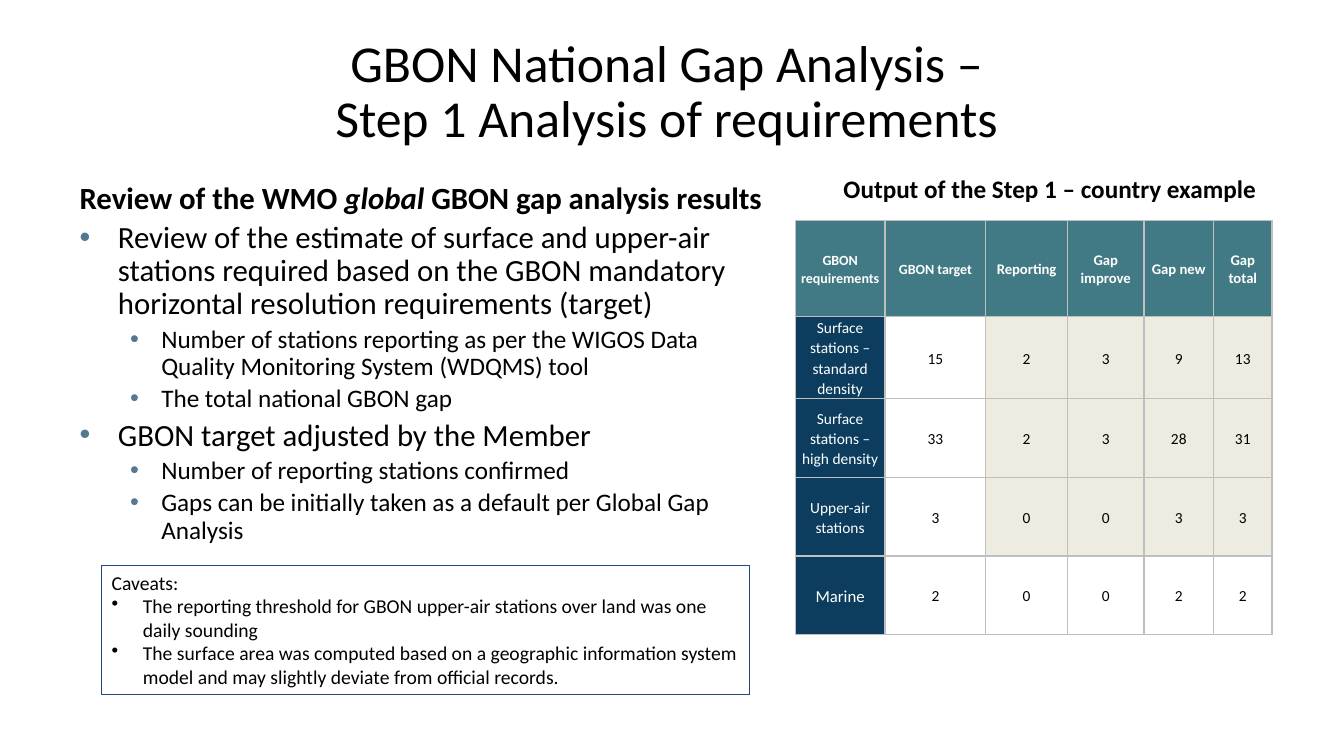
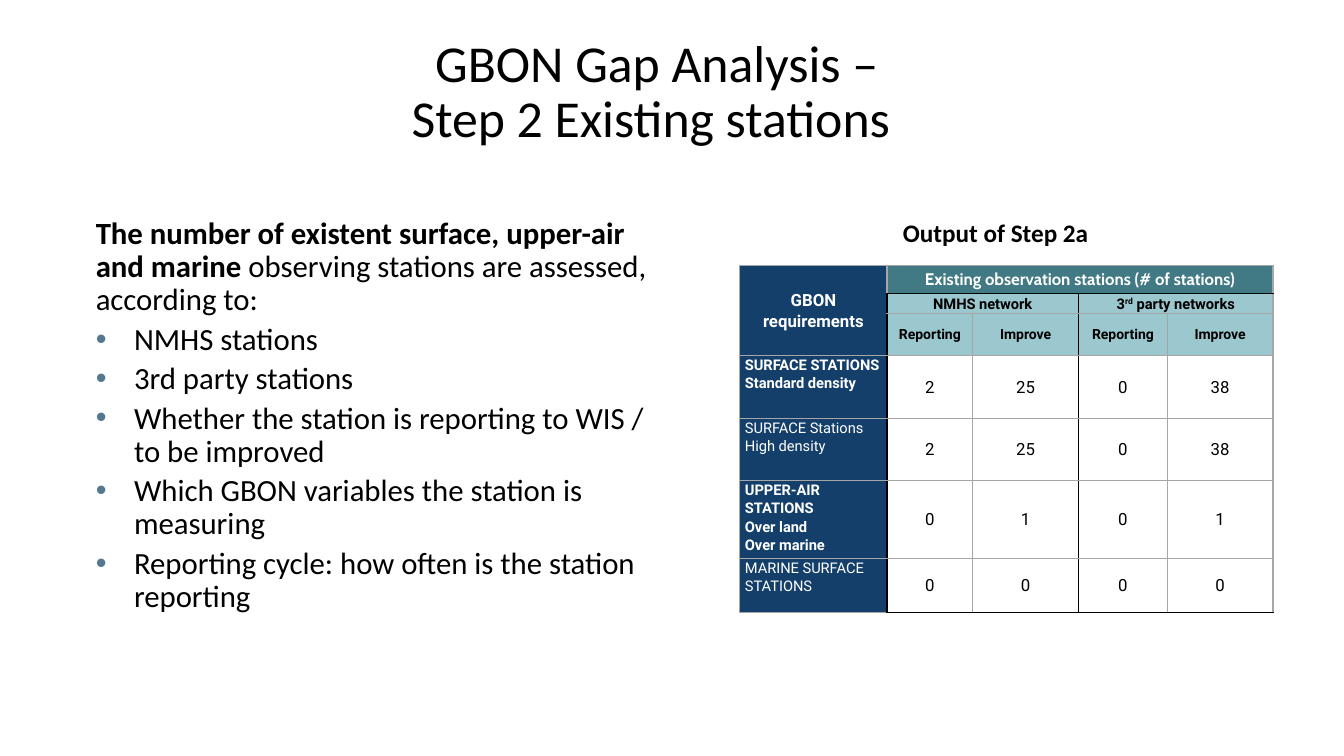
from dataclasses import dataclass

from lxml import etree
from pptx import Presentation
from pptx import util as u
from pptx.dml.color import RGBColor
from pptx.enum import shapes, text as t
from pptx.oxml import ns

PX = 9144  # EMU per px, 100 px to the inch


@dataclass(frozen=True)
class Theme:
    black: str = "000000"
    white: str = "FFFFFF"
    teal: str = "417A84"
    aqua: str = "9BC7CE"
    navy: str = "0C3D5E"
    blue: str = "143F6A"
    cream: str = "EEECE1"
    frame: str = "1F497D"
    bullet: str = "55788F"
    silver: str = "BFBFBF"
    grey: str = "A6A6A6"
    font: str = "Calibri"
    table_font: str = "Roboto"
    banner_font: str = "Cabin"
    title: float = 37
    body: float = 22
    sub: float = 18
    note: float = 14
    cell: float = 12
    label: float = 11
    head: float = 10.5
    small: float = 10


theme = Theme()
CENTER = t.PP_ALIGN.CENTER
MIDDLE, TOP = t.MSO_ANCHOR.MIDDLE, t.MSO_ANCHOR.TOP


def write(frame, content, align=t.PP_ALIGN.LEFT, spacing=1.0, indent=0, hang=0,
          bullet=None, level=0, **font):
    """Add one paragraph; content is a string or (string, font changes) pairs."""
    first = not frame.text
    paragraph = frame.paragraphs[0] if first else frame.add_paragraph()
    properties = paragraph._p.get_or_add_pPr()
    properties.set("marL", str(indent * PX))
    properties.set("indent", str(-hang * PX))
    if bullet:
        color = etree.SubElement(properties, ns.qn("a:buClr"))
        etree.SubElement(color, ns.qn("a:srgbClr"), val=bullet)
        etree.SubElement(properties, ns.qn("a:buChar"), char="•")
    else:
        etree.SubElement(properties, ns.qn("a:buNone"))
    paragraph.level = level
    paragraph.alignment = align
    paragraph.line_spacing = spacing
    if first:
        paragraph.space_before = u.Pt(0)
    for words, changes in [(content, {})] if isinstance(content, str) else content:
        look = {"size": theme.body, "color": theme.black, "name": theme.font,
                "bold": False, "italic": False, **font, **changes}
        for number, line in enumerate(words.split("\n")):
            if number:
                paragraph.add_line_break()
            run = paragraph.add_run()
            run.text = line
            run.font.size = u.Pt(look["size"])
            run.font.name = look["name"]
            run.font.bold = look["bold"]
            run.font.italic = look["italic"]
            run.font.color.rgb = RGBColor.from_string(look["color"])
            if "baseline" in look:
                run.font._element.set("baseline", look["baseline"])


def add_grid(slide, left, top, widths, heights, top_inset, edge_color):
    """Add a plain table; edge_color(row, column, side) gives each border."""
    graphic = slide.shapes.add_table(len(heights), len(widths), left * PX, top * PX,
                                     sum(widths) * PX, sum(heights) * PX)
    table = graphic.table
    table.first_row = table.horz_banding = False
    for column, width in zip(table.columns, widths):
        column.width = width * PX
    for row, height in zip(table.rows, heights):
        row.height = height * PX
    for r in range(len(heights)):
        for c in range(len(widths)):
            cell = table.cell(r, c)
            cell.margin_left = cell.margin_right = 5 * PX
            cell.margin_top, cell.margin_bottom = top_inset * PX, 0
            cell.vertical_anchor = MIDDLE
            properties = cell._tc.get_or_add_tcPr()
            for side in "LRTB":
                line = etree.SubElement(properties, ns.qn(f"a:ln{side}"), w="12700")
                fill = etree.SubElement(line, ns.qn("a:solidFill"))
                etree.SubElement(fill, ns.qn("a:srgbClr"), val=edge_color(r, c, side))
            cell.fill.solid()
            cell.fill.fore_color.rgb = RGBColor.from_string(theme.white)
    return table


presentation = Presentation()
presentation.slide_width, presentation.slide_height = u.Emu(12192000), u.Emu(6858000)

# Content of titles, lists and captions; list entries are (level, content)
pages = [
    {"title": "GBON National Gap Analysis – \nStep 1 Analysis of requirements ",
     "title_box": (217, 30, 900, 125),
     "body_box": (69, 176, 708, 495),
     "lead": [("Review of the WMO ", {"bold": True}),
              ("global", {"bold": True, "italic": True}),
              (" GBON gap analysis results", {"bold": True})],
     "items": [
         (0, "Review of the estimate of surface and upper-air stations required based "
             "on the GBON mandatory horizontal resolution requirements (target)"),
         (1, "Number of stations reporting as per the WIGOS Data Quality Monitoring "
             "System (WDQMS) tool"),
         (1, "The total national GBON gap"),
         (0, "GBON target adjusted by the Member"),
         (1, "Number of reporting stations confirmed"),
         (1, "Gaps can be initially taken as a default per Global Gap Analysis")],
     "caption": "Output of the Step 1 – country example",
     "caption_box": (827, 167, 436, 40)},
    {"title": "GBON Gap Analysis –\nStep 2 Existing stations ",
     "title_box": (186, 30, 931, 125),
     "body_box": (85, 211, 581, 495),
     "lead": [("The number of existent surface, upper-air and marine ", {"bold": True}),
              ("observing stations are assessed, according to:", {})],
     "items": [
         (0, "NMHS stations"),
         (0, "3rd party stations"),
         (0, "Whether the station is reporting to WIS / to be improved"),
         (0, "Which GBON variables the station is measuring"),
         (0, "Reporting cycle: how often is the station reporting")],
     "caption": "Output of Step 2a",
     "caption_box": (886, 211, 284, 41)},
]
list_styles = [{"indent": 38, "hang": 38, "size": theme.body},
               {"indent": 81, "hang": 31, "size": theme.sub}]

slides = []
for page in pages:
    slide = presentation.slides.add_slide(presentation.slide_layouts[1])
    slides.append(slide)
    title, body = slide.shapes.title, slide.placeholders[1]
    caption = slide.shapes.add_textbox(0, 0, 0, 0)
    for shape, box, anchor in ((title, "title_box", MIDDLE), (body, "body_box", TOP),
                               (caption, "caption_box", TOP)):
        shape.left, shape.top, shape.width, shape.height = (n * PX for n in page[box])
        shape.text_frame.word_wrap = True
        shape.text_frame.auto_size = t.MSO_AUTO_SIZE.NONE
        shape.text_frame.vertical_anchor = anchor
    write(title.text_frame, page["title"], align=CENTER, spacing=0.9, size=theme.title)
    write(body.text_frame, page["lead"], spacing=0.9)
    for level, item in page["items"]:
        write(body.text_frame, item, level=level, spacing=0.9, bullet=theme.bullet,
              **list_styles[level])
    write(caption.text_frame, page["caption"], size=theme.sub, bold=True)

requirements, stations = slides

# Slide 1: requirements table
requirement_rows = [
    ("GBON requirements", "GBON target", "Reporting", "Gap improve", "Gap new", "Gap total"),
    ("Surface stations – standard density", "15", "2", "3", "9", "13"),
    ("Surface stations –high density", "33", "2", "3", "28", "31"),
    ("Upper-air stations", "3", "0", "0", "3", "3"),
    ("Marine", "2", "0", "0", "2", "2"),
]
table = add_grid(requirements, 789, 219, (89, 100, 81, 76, 69, 58), (95, 78, 78, 78, 78), 1,
                 lambda row, column, side: theme.silver)
for r, values in enumerate(requirement_rows):
    for c, value in enumerate(values):
        fill, color, size, spacing = theme.white, theme.black, theme.label, 1.07
        if r == 0:
            fill, color = theme.teal, theme.white
            size, spacing = (theme.small, 1.07) if c < 2 else (theme.head, 1.0)
        elif c == 0:
            fill, color = theme.navy, theme.white
            size = theme.cell if value == "Marine" else theme.label
        elif c > 1 and r < 4:
            fill = theme.cream
        cell = table.cell(r, c)
        cell.fill.fore_color.rgb = RGBColor.from_string(fill)
        write(cell.text_frame, value, align=CENTER, spacing=spacing, size=size,
              color=color, bold=r == 0)

# Slide 1: caveats box
caveats = requirements.shapes.add_shape(shapes.MSO_SHAPE.RECTANGLE, 101 * PX, 561 * PX,
                                        643 * PX, 128 * PX)
caveats.shadow.inherit = False
caveats.fill.background()
caveats.line.color.rgb = RGBColor.from_string(theme.frame)
caveats.line.width = u.Pt(0.75)
caveats.text_frame.word_wrap = True
caveats.text_frame.vertical_anchor = TOP
write(caveats.text_frame, "Caveats:", size=theme.note)
for caveat in ("The reporting threshold for GBON upper-air stations over land was one "
               "daily sounding",
               "The surface area was computed based on a geographic information system "
               "model and may slightly deviate from official records."):
    write(caveats.text_frame, caveat, size=theme.note, indent=31, hang=31,
          bullet=theme.black)


# Slide 2: stations table, black lines around the two networks
black_edges = {(r, c, side) for r in range(1, 7)
               for c, side in ((0, "R"), (1, "L"), (2, "R"), (3, "L"))}
black_edges |= {(r, c, side) for c in range(1, 5)
                for r, side in ((0, "B"), (1, "T"), (6, "B"))}
black_edges.add((1, 4, "R"))
table = add_grid(stations, 734, 263, (146, 85, 105, 88, 105), (28, 20, 42, 62, 62, 77, 54), 0,
                 lambda *edge: theme.black if edge in black_edges else theme.grey)

# Header cells: row, column, last row, last column, content, fill, format
white_head = {"color": theme.white, "size": theme.cell}
network_head = {"size": theme.head}
column_head = {"size": theme.small}
headers = [
    (0, 0, 2, 0, "GBON requirements", theme.blue, white_head),
    (0, 1, 0, 4, "Existing observation stations (# of stations)", theme.teal,
     {**white_head, "name": theme.banner_font}),
    (1, 1, 1, 2, "NMHS network", theme.aqua, network_head),
    (1, 3, 1, 4, [("3", {}), ("rd", {"baseline": "30000"}), (" party networks", {})],
     theme.aqua, network_head),
]
headers += [(2, c, 2, c, "Improve" if c % 2 == 0 else "Reporting", theme.aqua, column_head)
            for c in range(1, 5)]
for r, c, last_row, last_column, content, fill, style in headers:
    cell = table.cell(r, c)
    if (r, c) != (last_row, last_column):
        cell.merge(table.cell(last_row, last_column))
    cell.fill.fore_color.rgb = RGBColor.from_string(fill)
    write(cell.text_frame, content, align=CENTER, spacing=1.07,
          **{"name": theme.table_font, "bold": True, **style})

# Station rows: label lines, bold label, counts
station_rows = [
    (("SURFACE STATIONS", "Standard density"), True, ("2", "25", "0", "38")),
    (("SURFACE Stations High density",), False, ("2", "25", "0", "38")),
    (("UPPER-AIR STATIONS", "Over land", "Over marine"), True, ("0", "1", "0", "1")),
    (("MARINE SURFACE STATIONS",), False, ("0", "0", "0", "0")),
]
for r, (lines, bold, counts) in enumerate(station_rows, start=3):
    label = table.cell(r, 0)
    label.vertical_anchor = TOP
    label.fill.fore_color.rgb = RGBColor.from_string(theme.blue)
    for line in lines:
        write(label.text_frame, line, spacing=1.07, size=theme.head, color=theme.white,
              name=theme.table_font, bold=bold)
    for c, count in enumerate(counts, start=1):
        write(table.cell(r, c).text_frame, count, align=CENTER, spacing=1.07,
              size=theme.cell, name=theme.table_font)

presentation.save("out.pptx")
